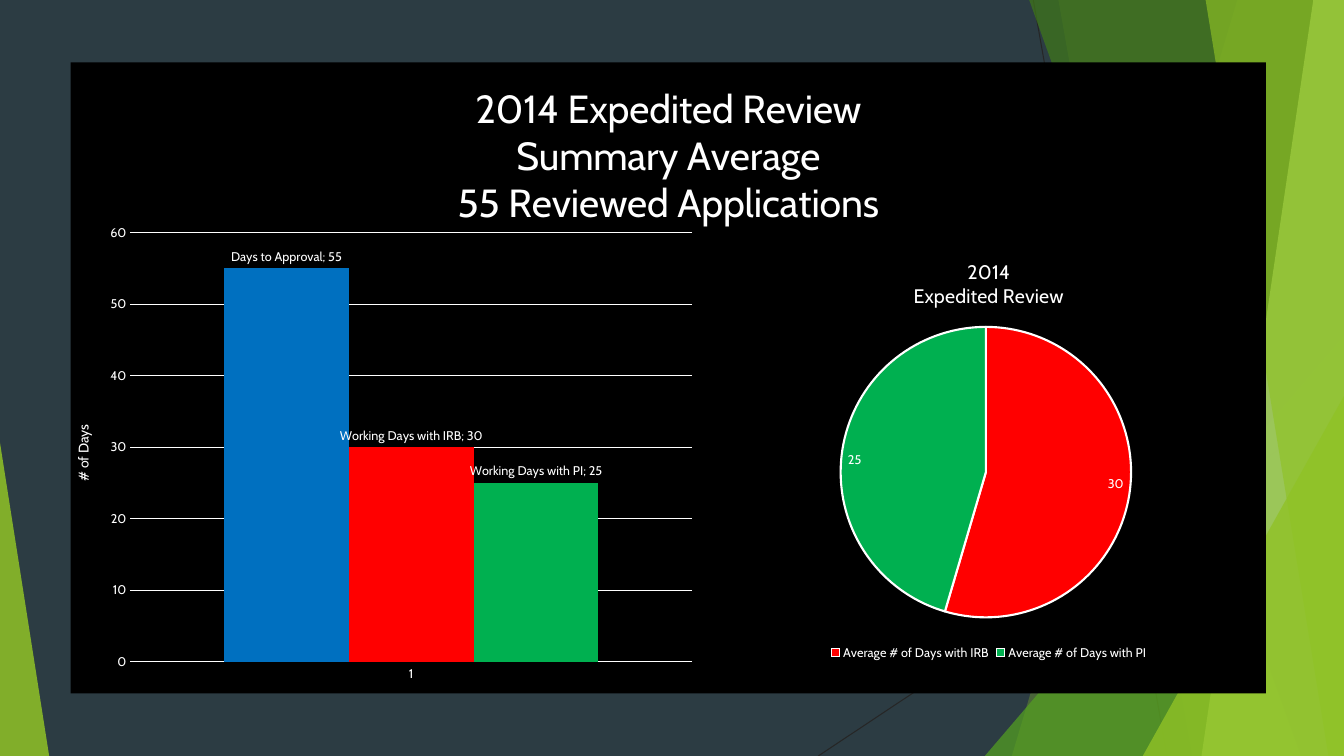
from dataclasses import dataclass

from lxml.etree import SubElement
from pptx import Presentation
from pptx.chart.axis import CategoryAxis, ValueAxis
from pptx.chart.chart import Chart
from pptx.chart.data import CategoryChartData
from pptx.dml.color import RGBColor
from pptx.dml.fill import FillFormat
from pptx.enum.chart import XL_CHART_TYPE as ChartType
from pptx.enum.chart import XL_LABEL_POSITION as LabelPosition
from pptx.enum.chart import XL_LEGEND_POSITION as LegendPosition
from pptx.enum.chart import XL_TICK_MARK as TickMark
from pptx.enum.shapes import MSO_CONNECTOR as Connector
from pptx.enum.shapes import MSO_SHAPE as Preset
from pptx.oxml import parse_xml
from pptx.oxml.ns import qn
from pptx.shapes.autoshape import Shape
from pptx.slide import Slide
from pptx.text.text import Font, TextFrame
from pptx.util import Cm, Pt

SLATE = RGBColor(0x2C, 0x3C, 0x43)
CHARCOAL = RGBColor(0x26, 0x26, 0x26)
LIME = RGBColor(0x90, 0xC2, 0x26)
PALE_LIME = RGBColor(0xC0, 0xE4, 0x74)
LEAF = RGBColor(0x54, 0xA0, 0x21)
FOREST = RGBColor(0x3F, 0x78, 0x19)
BLACK = RGBColor(0x00, 0x00, 0x00)
WHITE = RGBColor(0xFF, 0xFF, 0xFF)
BLUE = RGBColor(0x00, 0x70, 0xC0)
RED = RGBColor(0xFF, 0x00, 0x00)
GREEN = RGBColor(0x00, 0xB0, 0x50)

FONT = "Cabin"
WIDTH, HEIGHT, TOP = 33.87, 19.05, -0.02


@dataclass(frozen=True)
class Ray:
    start: tuple[float, float]
    end: tuple[float, float]


@dataclass(frozen=True)
class Panel:
    top_x: float
    bottom_x: float
    color: RGBColor
    opacity: int


@dataclass(frozen=True)
class Wedge:
    left: float
    top: float
    width: float
    apex: float
    color: RGBColor
    opacity: int


@dataclass(frozen=True)
class Measure:
    label: str
    days: int
    color: RGBColor


RAYS = [Ray((26.04, 0), (29.41, HEIGHT)), Ray((WIDTH, 10.24), (20.62, HEIGHT))]
FACETS = [
    Panel(31.19, 25.5, LIME, 30),
    Panel(26.67, 30.05, LIME, 20),
    Wedge(24.82, 8.46, 9.05, 1, LEAF, 72),
    Panel(25.93, 32.79, FOREST, 70),
    Panel(33.1, 30.28, PALE_LIME, 70),
    Panel(30.38, 33.48, LIME, 65),
    Wedge(28.8, 9.98, 5.07, 1, LIME, 80),
    Wedge(0, 11.15, 1.24, 0, LIME, 85),
]
DURATIONS = [
    Measure("Days to Approval", 55, BLUE),
    Measure("Working Days with IRB", 30, RED),
    Measure("Working Days with PI", 25, GREEN),
]
SHARES = [
    Measure("Average # of Days with IRB", 30, RED),
    Measure("Average # of Days with PI", 25, GREEN),
]


def paint(fill: FillFormat, color: RGBColor) -> None:
    fill.solid()
    fill.fore_color.rgb = color


def style(font: Font, size: float) -> None:
    font.name = FONT
    font.size = Pt(size)
    font.bold = False
    font.color.rgb = WHITE


def write(frame: TextFrame, text: str, size: float) -> None:
    frame.text = text
    for paragraph in frame.paragraphs:
        for run in paragraph.runs:
            style(run.font, size)


def draw_ray(slide: Slide, ray: Ray) -> None:
    line = slide.shapes.add_connector(
        Connector.STRAIGHT, *map(Cm, ray.start), *map(Cm, ray.end))
    line.line.color.rgb = CHARCOAL
    line.line.width = Pt(0.75)
    SubElement(line.element.spPr, qn("a:effectLst"))


def outline_panel(slide: Slide, panel: Panel) -> Shape:
    builder = slide.shapes.build_freeform(Cm(panel.top_x), Cm(TOP))
    corners = [(WIDTH, TOP), (WIDTH, HEIGHT), (panel.bottom_x, HEIGHT)]
    builder.add_line_segments([(Cm(x), Cm(y)) for x, y in corners])
    return builder.convert_to_shape()


def outline_wedge(slide: Slide, wedge: Wedge) -> Shape:
    triangle = slide.shapes.add_shape(
        Preset.ISOSCELES_TRIANGLE, Cm(wedge.left), Cm(wedge.top),
        Cm(wedge.width), Cm(HEIGHT - wedge.top))
    triangle.adjustments[0] = wedge.apex
    return triangle


def draw_facet(slide: Slide, facet: Panel | Wedge) -> None:
    outline = outline_panel if isinstance(facet, Panel) else outline_wedge
    shape = outline(slide, facet)
    shape.shadow.inherit = False
    shape.line.fill.background()
    paint(shape.fill, facet.color)
    tint = next(shape.element.spPr.iter(qn("a:srgbClr")))
    SubElement(tint, qn("a:alpha")).set("val", str(facet.opacity * 1000))


def place_plot(chart: Chart, x: float, y: float, w: float, h: float) -> None:
    area = chart.element.find(".//" + qn("c:plotArea"))
    layout = area.find(qn("c:layout"))
    if layout is None:
        layout = area.makeelement(qn("c:layout"))
        area.insert(0, layout)
    manual = SubElement(layout, qn("c:manualLayout"))
    settings = {"layoutTarget": "inner", "xMode": "edge", "yMode": "edge",
                "x": x, "y": y, "w": w, "h": h}
    for tag, value in settings.items():
        SubElement(manual, qn(f"c:{tag}")).set("val", str(value))


def fill_chart_area(chart: Chart, color: RGBColor) -> None:
    area = parse_xml(
        '<c:spPr xmlns:c="http://schemas.openxmlformats.org/drawingml/2006/chart" '
        'xmlns:a="http://schemas.openxmlformats.org/drawingml/2006/main">'
        f'<a:solidFill><a:srgbClr val="{color}"/></a:solidFill>'
        '<a:ln><a:noFill/></a:ln></c:spPr>')
    chart.element.find(qn("c:chart")).addnext(area)


def format_axis(axis: CategoryAxis | ValueAxis) -> None:
    axis.major_tick_mark = axis.minor_tick_mark = TickMark.NONE
    style(axis.tick_labels.font, 9)
    axis.format.line.width = Pt(0.75)
    axis.format.line.color.rgb = WHITE


def draw_durations(slide: Slide) -> None:
    data = CategoryChartData(number_format="0")
    data.categories = ["1"]
    for measure in DURATIONS:
        data.add_series(measure.label, [measure.days])
    chart = slide.shapes.add_chart(
        ChartType.COLUMN_CLUSTERED, Cm(1.78), Cm(1.57), Cm(30.12), Cm(15.9), data).chart
    style(chart.font, 10)
    fill_chart_area(chart, BLACK)
    place_plot(chart, 0.05, 0.27, 0.47, 0.68)
    chart.has_legend = False
    write(chart.chart_title.text_frame,
          "2014 Expedited Review\nSummary Average\n55 Reviewed Applications", 28)

    columns = chart.plots[0]
    columns.gap_width = 150
    columns.overlap = 0
    columns.vary_by_categories = False
    for series, measure in zip(columns.series, DURATIONS):
        paint(series.format.fill, measure.color)
        labels = series.data_labels
        labels.show_value = labels.show_series_name = True
        labels.position = LabelPosition.OUTSIDE_END
        style(labels.font, 9)
        separator = labels._element.makeelement(qn("c:separator"))
        separator.text = "; "
        labels._element.find(qn("c:showBubbleSize")).addnext(separator)

    days = chart.value_axis
    for axis in (chart.category_axis, days):
        format_axis(axis)
    days.format.line.fill.background()
    days.minimum_scale, days.maximum_scale, days.major_unit = 0, 60, 10
    days.tick_labels.number_format = "0"
    days.tick_labels.number_format_is_linked = False
    days.major_gridlines.format.line.color.rgb = WHITE
    days.major_gridlines.format.line.width = Pt(0.75)
    write(days.axis_title.text_frame, "# of Days", 10)


def draw_shares(slide: Slide) -> None:
    data = CategoryChartData(number_format="0")
    data.categories = [share.label for share in SHARES]
    data.add_series("Series 1", [share.days for share in SHARES])
    chart = slide.shapes.add_chart(
        ChartType.PIE, Cm(17.45), Cm(6.1), Cm(14.94), Cm(10.64), data).chart
    style(chart.font, 10)
    place_plot(chart, 0.25, 0.2, 0.49, 0.69)
    write(chart.chart_title.text_frame, "2014\nExpedited Review", 14)
    chart.has_legend = True
    chart.legend.position = LegendPosition.BOTTOM
    chart.legend.include_in_layout = False
    style(chart.legend.font, 9)

    series = chart.plots[0].series[0]
    for index, share in enumerate(SHARES):
        slice_format = series.points[index].format
        paint(slice_format.fill, share.color)
        slice_format.line.color.rgb = WHITE
        slice_format.line.width = Pt(1.5)
    series.data_labels.show_value = True
    series.data_labels.position = LabelPosition.INSIDE_END
    style(series.data_labels.font, 9)


def main() -> None:
    deck = Presentation()
    deck.slide_width, deck.slide_height = Cm(WIDTH), Cm(HEIGHT)
    slide = deck.slides.add_slide(deck.slide_layouts[6])
    paint(slide.background.fill, SLATE)
    for ray in RAYS:
        draw_ray(slide, ray)
    for facet in FACETS:
        draw_facet(slide, facet)
    draw_durations(slide)
    draw_shares(slide)
    deck.save("out.pptx")


if __name__ == "__main__":
    main()
